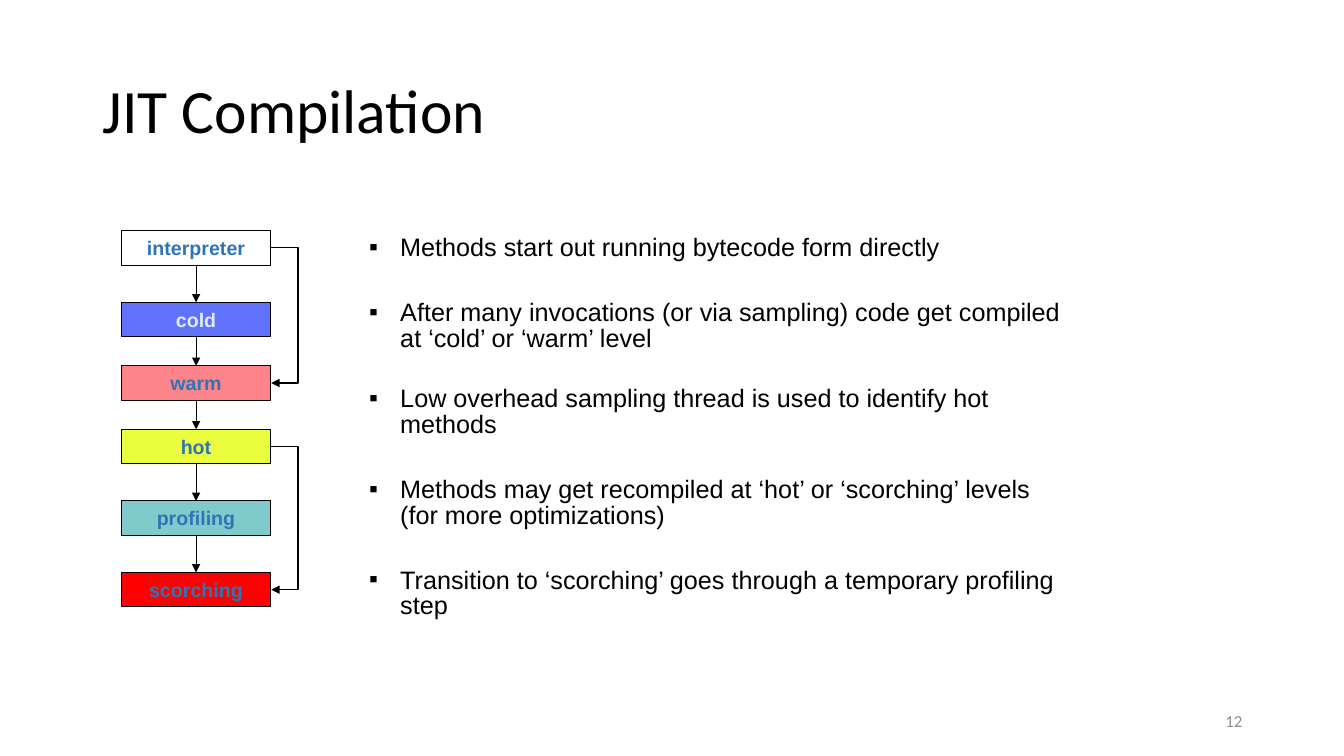
from lxml import etree
from pptx import Presentation
from pptx.dml.color import RGBColor
from pptx.enum.shapes import MSO_CONNECTOR, MSO_SHAPE
from pptx.enum.text import MSO_ANCHOR, MSO_AUTO_SIZE, PP_ALIGN
from pptx.oxml.ns import qn
from pptx.util import Inches, Pt

LEFT, MID, RIGHT = PP_ALIGN.LEFT, PP_ALIGN.CENTER, PP_ALIGN.RIGHT
TOP, CENTRE = MSO_ANCHOR.TOP, MSO_ANCHOR.MIDDLE
FIXED = MSO_AUTO_SIZE.NONE
RECT = MSO_SHAPE.RECTANGLE
STRAIGHT, ELBOW = MSO_CONNECTOR.STRAIGHT, MSO_CONNECTOR.ELBOW


def write(shape, *lines, size=18, font="Arial", color="000000", bold=False,
          align=LEFT, anchor=CENTRE, space=1.0):
    frame = shape.text_frame
    frame.word_wrap = True
    frame.auto_size = FIXED
    frame.vertical_anchor = anchor
    for i, line in enumerate(lines):
        para = frame.add_paragraph() if i else frame.paragraphs[0]
        para.alignment = align
        para.line_spacing = space
        para.space_before = Pt(0)
        run = para.add_run()
        run.text = line
        run.font.size = Pt(size)
        run.font.name = font
        run.font.bold = bold
        run.font.color.rgb = RGBColor.from_string(color)


def arrow(kind, x1, y1, x2, y2):
    link = slide.shapes.add_connector(
        kind, Inches(x1), Inches(y1), Inches(x2), Inches(y2))
    link.line.color.rgb = RGBColor.from_string("000000")
    link.line.width = Pt(0.75)
    props = link.element.spPr
    etree.SubElement(props.find(qn("a:ln")), qn("a:tailEnd"), type="triangle")
    etree.SubElement(props, qn("a:effectLst"))
    return link


deck = Presentation()
deck.slide_width, deck.slide_height = Inches(13.33), Inches(7.5)
slide = deck.slides.add_slide(deck.slide_layouts[1])

# Title
title = slide.shapes.title
title.left, title.top = Inches(0.92), Inches(0.4)
title.width, title.height = Inches(11.5), Inches(1.45)
write(title, "JIT Compilation", size=44, font="Calibri", space=0.9)

# Bullet list
body = slide.placeholders[1]
body.left, body.top = Inches(3.56), Inches(2.29)
body.width, body.height = Inches(7.1), Inches(4.46)
write(body,
      "Methods start out running bytecode form directly",
      "After many invocations (or via sampling) code get compiled "
      "at ‘cold’ or ‘warm’ level",
      "Low overhead sampling thread is used to identify hot methods",
      "Methods may get recompiled at ‘hot’ or ‘scorching’ levels "
      "(for more optimizations)",
      "Transition to ‘scorching’ goes through a temporary profiling step",
      anchor=TOP, space=0.85)
for para, gap in zip(body.text_frame.paragraphs, (0, 28, 25, 28, 28)):
    para.space_before = Pt(gap)
    props = para._p.get_or_add_pPr()
    props.set("marL", str(Inches(0.31)))
    props.set("indent", str(-Inches(0.31)))
    etree.SubElement(props, qn("a:buFont"), typeface="Arial")
    etree.SubElement(props, qn("a:buChar"), char="▪")

# Compilation levels
BOX_X, BOX_W, BOX_H = 1.21, 1.47, 0.34
levels = [
    ("interpreter", 2.29, "FFFFFF", "2E75B6"),
    ("cold", 3.0, "6072FA", "DEEBF7"),
    ("warm", 3.63, "FC848A", "2E75B6"),
    ("hot", 4.26, "EBFD3F", "2E75B6"),
    ("profiling", 4.97, "009999", "2E75B6"),
    ("scorching", 5.68, "FF0000", "2E75B6"),
]
boxes = {}
for name, y, fill, ink in levels:
    box = slide.shapes.add_shape(
        RECT, Inches(BOX_X), Inches(y), Inches(BOX_W), Inches(BOX_H))
    box.shadow.inherit = False
    box.fill.solid()
    box.fill.fore_color.rgb = RGBColor.from_string(fill)
    box.line.color.rgb = RGBColor.from_string("000000")
    box.line.width = Pt(0.75)
    write(box, name, size=14, color=ink, bold=True, align=MID)
    boxes[name] = box

# Half-transparent fill of the temporary step
tint = boxes["profiling"].element.spPr.find(qn("a:solidFill"))[0]
etree.SubElement(tint, qn("a:alpha"), val="50000")

# Arrows from each level to the next
mid = BOX_X + BOX_W / 2
for (name, y, *_), (after, low, *_) in zip(levels, levels[1:]):
    link = arrow(STRAIGHT, mid, y + BOX_H, mid, low)
    link.begin_connect(boxes[name], 2)
    link.end_connect(boxes[after], 0)

# Bent arrows that skip a level
side, step, reach = BOX_X + BOX_W, 0.01, 0.28
for start, end in ((0, 2), (3, 5)):
    y1, y2 = (levels[i][1] + BOX_H / 2 for i in (start, end))
    link = arrow(ELBOW, side, y1, side + step, y2)
    guides = link.element.spPr.find(qn("a:prstGeom")).find(qn("a:avLst"))
    etree.SubElement(guides, qn("a:gd"), name="adj1",
                     fmla=f"val {round(reach / step * 100000)}")

# Page number
page = slide.shapes.add_textbox(
    Inches(9.42), Inches(6.95), Inches(3), Inches(0.4))
write(page, "12", size=12, font="Calibri", color="8C8C8C", align=RIGHT)

deck.save("out.pptx")
